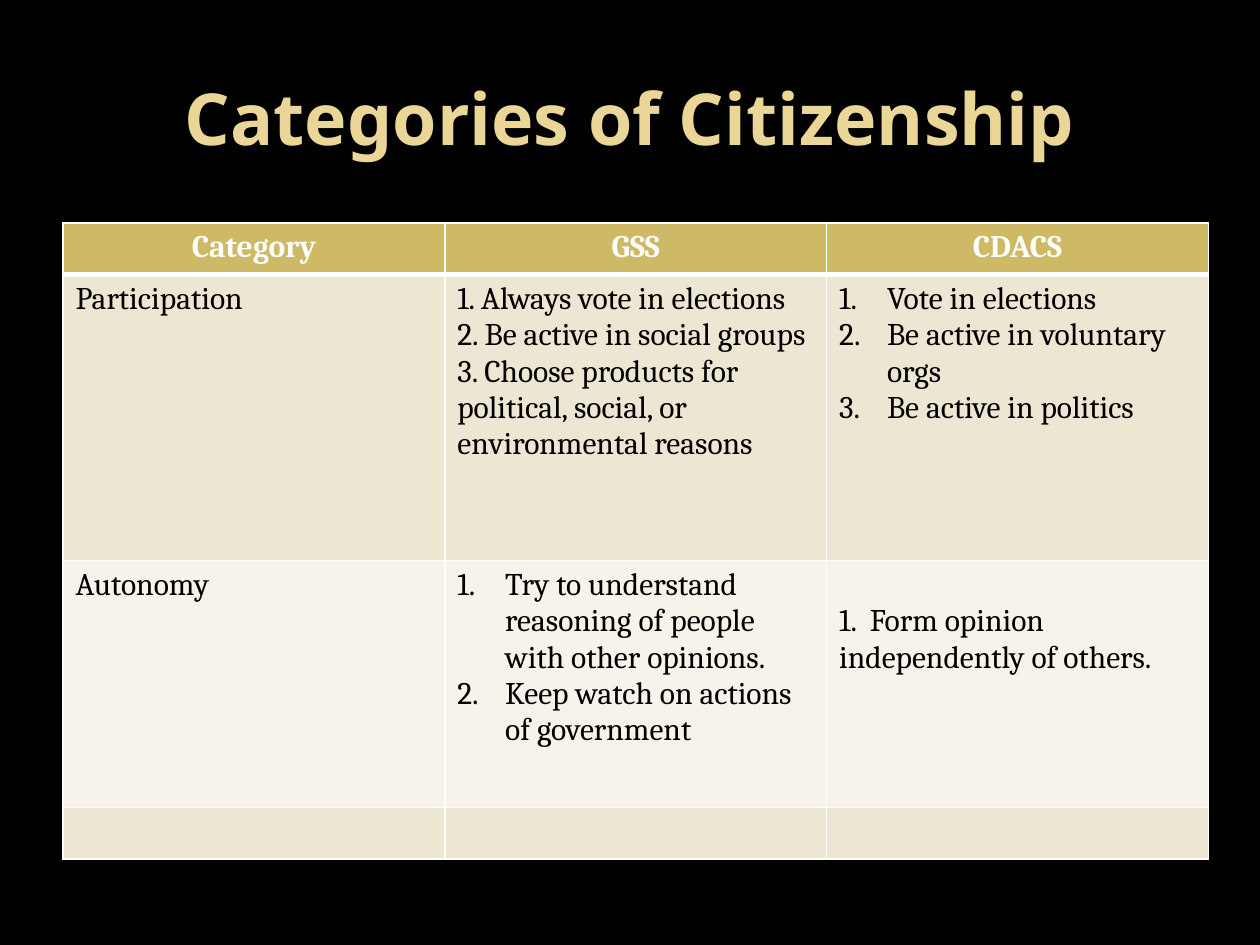
from lxml.etree import SubElement
from pptx import Presentation
from pptx.dml.color import RGBColor
from pptx.enum.text import MSO_ANCHOR, MSO_AUTO_SIZE, PP_ALIGN
from pptx.oxml import parse_xml
from pptx.oxml.ns import nsdecls, qn
from pptx.util import Inches, Pt

COLORS = {
    "background": "000000",
    "title": "EAD696",
    "header": "CEB966",
    "dark band": "EDE6D3",
    "light band": "F6F3EA",
    "border": "FFFFFF",
    "header text": "FFFFFF",
    "body text": "000000",
}


def write_text(text_frame, lines, color, size=18, font="Cambria", bold=False,
               align=PP_ALIGN.LEFT, numbered=False):
    for index, line in enumerate(lines):
        paragraph = text_frame.paragraphs[0] if index == 0 else text_frame.add_paragraph()
        paragraph.alignment = align
        if numbered:
            properties = paragraph._p.get_or_add_pPr()
            properties.set("marL", str(Inches(0.38)))
            properties.set("indent", str(Inches(-0.38)))
            SubElement(properties, qn("a:buAutoNum"), type="arabicPeriod")
        run = paragraph.add_run()
        run.text = line
        run.font.name = font
        run.font.size = Pt(size)
        run.font.bold = bold
        run.font.color.rgb = RGBColor.from_string(COLORS[color])


def set_borders(cell, widths):
    # Border lines come before the fill in the cell properties
    properties = cell._tc.get_or_add_tcPr()
    for index, (side, width) in enumerate(widths.items()):
        properties.insert(index, parse_xml(
            f'<a:ln{side} {nsdecls("a")} w="{Pt(width)}"><a:solidFill>'
            f'<a:srgbClr val="{COLORS["border"]}"/></a:solidFill></a:ln{side}>'))


presentation = Presentation()
presentation.slide_width = Inches(10)
presentation.slide_height = Inches(7.5)
slide = presentation.slides.add_slide(presentation.slide_layouts[5])
slide.background.fill.solid()
slide.background.fill.fore_color.rgb = RGBColor.from_string(COLORS["background"])

# Title
title = slide.shapes.title
title.left, title.top = Inches(0.5), Inches(0.3)
title.width, title.height = Inches(9), Inches(1.25)
title.text_frame.auto_size = MSO_AUTO_SIZE.NONE
title.text_frame.vertical_anchor = MSO_ANCHOR.MIDDLE
write_text(title.text_frame, ["Categories of Citizenship"], "title", size=41,
           font="Noto Sans", bold=True, align=PP_ALIGN.CENTER)

# Table content: each cell is a list of lines
rows = [
    [["Category"], ["GSS"], ["CDACS"]],
    [
        ["Participation"],
        ["1. Always vote in elections", "2. Be active in social groups",
         "3. Choose products for political, social, or environmental reasons"],
        ["Vote in elections", "Be active in voluntary orgs", "Be active in politics"],
    ],
    [
        ["Autonomy"],
        ["Try to understand reasoning of people with other opinions.",
         "Keep watch on actions of government"],
        ["1.  Form opinion independently of others."],
    ],
    [[], [], []],
]
numbered_cells = {(1, 2), (2, 1)}
row_heights = [0.41, 2.27, 1.96, 0.41]
row_fills = ["header", "dark band", "light band", "dark band"]

# Table
table = slide.shapes.add_table(len(rows), 3, Inches(0.5), Inches(1.77),
                               Inches(9.09), Inches(sum(row_heights))).table
for column in table.columns:
    column.width = Inches(3.03)
for row_index, row in enumerate(rows):
    table.rows[row_index].height = Inches(row_heights[row_index])
    is_header = row_index == 0
    for column_index, lines in enumerate(row):
        cell = table.cell(row_index, column_index)
        cell.fill.solid()
        cell.fill.fore_color.rgb = RGBColor.from_string(COLORS[row_fills[row_index]])
        set_borders(cell, {"L": 1, "R": 1, "T": 3 if row_index == 1 else 1,
                           "B": 3 if is_header else 1})
        write_text(cell.text_frame, lines,
                   "header text" if is_header else "body text", bold=is_header,
                   align=PP_ALIGN.CENTER if is_header else PP_ALIGN.LEFT,
                   numbered=(row_index, column_index) in numbered_cells)

# The last opinion starts one line lower than its row
table.cell(2, 2).margin_top = Inches(0.34)

presentation.save("out.pptx")
